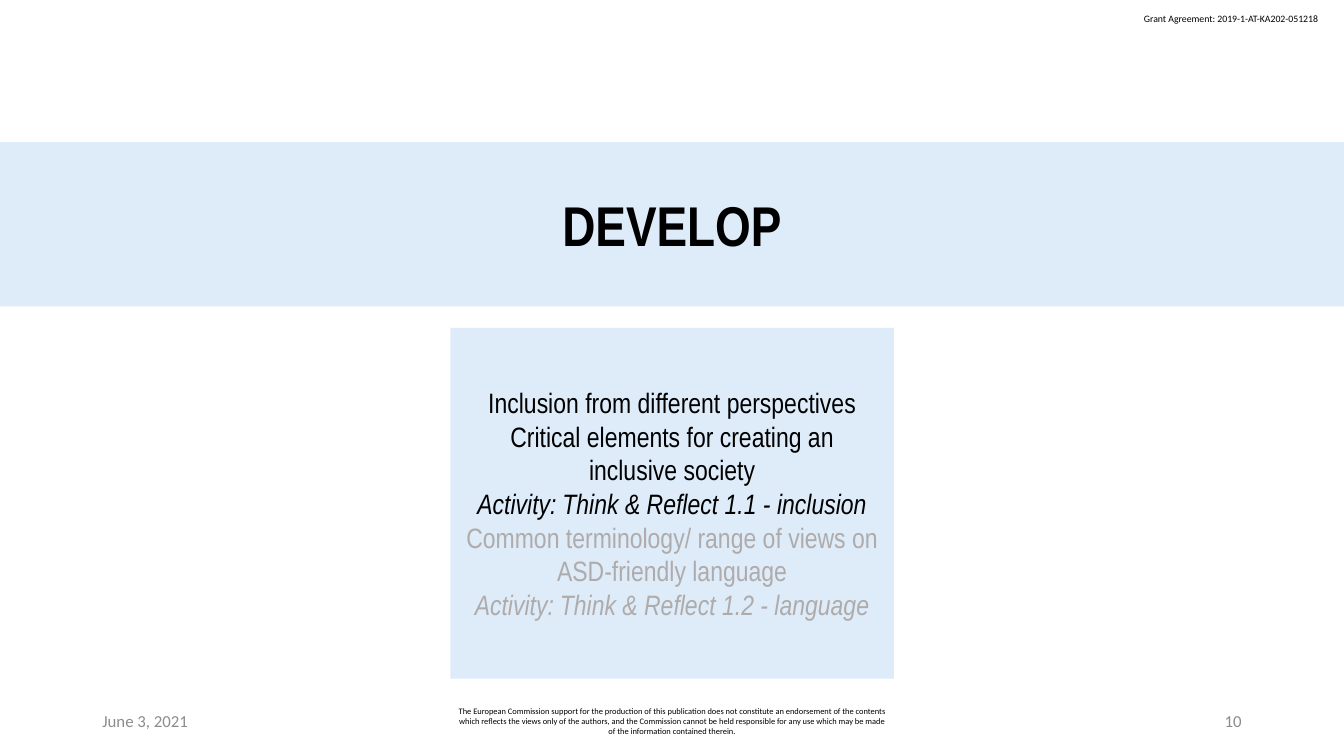
import pptx
import pptx.util
import pptx.dml.color
import pptx.enum.shapes
import pptx.enum.text

Cm = pptx.util.Cm
Align = pptx.enum.text.PP_ALIGN
Anchor = pptx.enum.text.MSO_ANCHOR

COLOURS = {"black": "000000", "footer": "8C8C8C", "later": "AFABAB", "panel": "DEEBF8"}

deck = pptx.Presentation()
deck.slide_width, deck.slide_height = Cm(33.87), Cm(19.05)
page = deck.slides.add_slide(deck.slide_layouts[6])


def add_line(para, text, size, colour, font="Calibri", align=Align.LEFT, bold=False, italic=False):
    para.alignment = align
    span = para.add_run()
    span.text = text
    span.font.name = font
    span.font.size = pptx.util.Pt(size)
    span.font.bold = bold
    span.font.italic = italic
    span.font.color.rgb = pptx.dml.color.RGBColor.from_string(COLOURS[colour])


def add_panel(left, top, width, height):
    panel = page.shapes.add_shape(
        pptx.enum.shapes.MSO_SHAPE.RECTANGLE, Cm(left), Cm(top), Cm(width), Cm(height))
    panel.shadow.inherit = False
    panel.fill.solid()
    panel.fill.fore_color.rgb = pptx.dml.color.RGBColor.from_string(COLOURS["panel"])
    panel.line.fill.background()
    frame = panel.text_frame
    frame.word_wrap = True
    frame.vertical_anchor = Anchor.MIDDLE
    frame.margin_left = frame.margin_right = Cm(0.33)
    frame.margin_top = frame.margin_bottom = Cm(0.18)
    return frame


# Grant number, top right
box = page.shapes.add_textbox(Cm(28.58), Cm(0.2), Cm(5), Cm(0.56))
box.text_frame.word_wrap = False
box.text_frame.auto_size = pptx.enum.text.MSO_AUTO_SIZE.SHAPE_TO_FIT_TEXT
add_line(box.text_frame.paragraphs[0], "Grant Agreement: 2019-1-AT-KA202-051218", 7, "black")

# Footer: date, disclaimer, page number
disclaimer = (
    "The European Commission support for the production of this publication does not "
    "constitute an endorsement of the contents which reflects the views only of the authors, "
    "and the Commission cannot be held responsible for any use which may be made of the "
    "information contained therein.")
footer = [
    (2.33, 7.62, "June 3, 2021", 12, "footer", Align.LEFT),
    (11.22, 11.43, disclaimer, 6, "black", Align.CENTER),
    (23.92, 7.62, "10", 12, "footer", Align.RIGHT),
]
for left, width, text, size, colour, align in footer:
    box = page.shapes.add_textbox(Cm(left), Cm(17.66), Cm(width), Cm(1.01))
    box.text_frame.word_wrap = True
    box.text_frame.vertical_anchor = Anchor.MIDDLE
    add_line(box.text_frame.paragraphs[0], text, size, colour, align=align)

# Title band
title = add_panel(0, 3.58, 33.87, 4.14)
add_line(title.paragraphs[0], "DEVELOP", 40, "black", "Arial Narrow", Align.CENTER, bold=True)

# Topics, with the later ones greyed out
topics = [
    ("Inclusion from different perspectives", "black", False),
    ("Critical elements for creating an inclusive society", "black", False),
    ("Activity: Think & Reflect 1.1 - inclusion", "black", True),
    ("Common terminology/ range of views on ASD-friendly language", "later", False),
    ("Activity: Think & Reflect 1.2 - language", "later", True),
]
agenda = add_panel(11.35, 8.26, 11.18, 8.84)
for index, (text, colour, italic) in enumerate(topics):
    para = agenda.add_paragraph() if index else agenda.paragraphs[0]
    add_line(para, text, 20, colour, "Arial Narrow", Align.CENTER, italic=italic)

deck.save("out.pptx")
